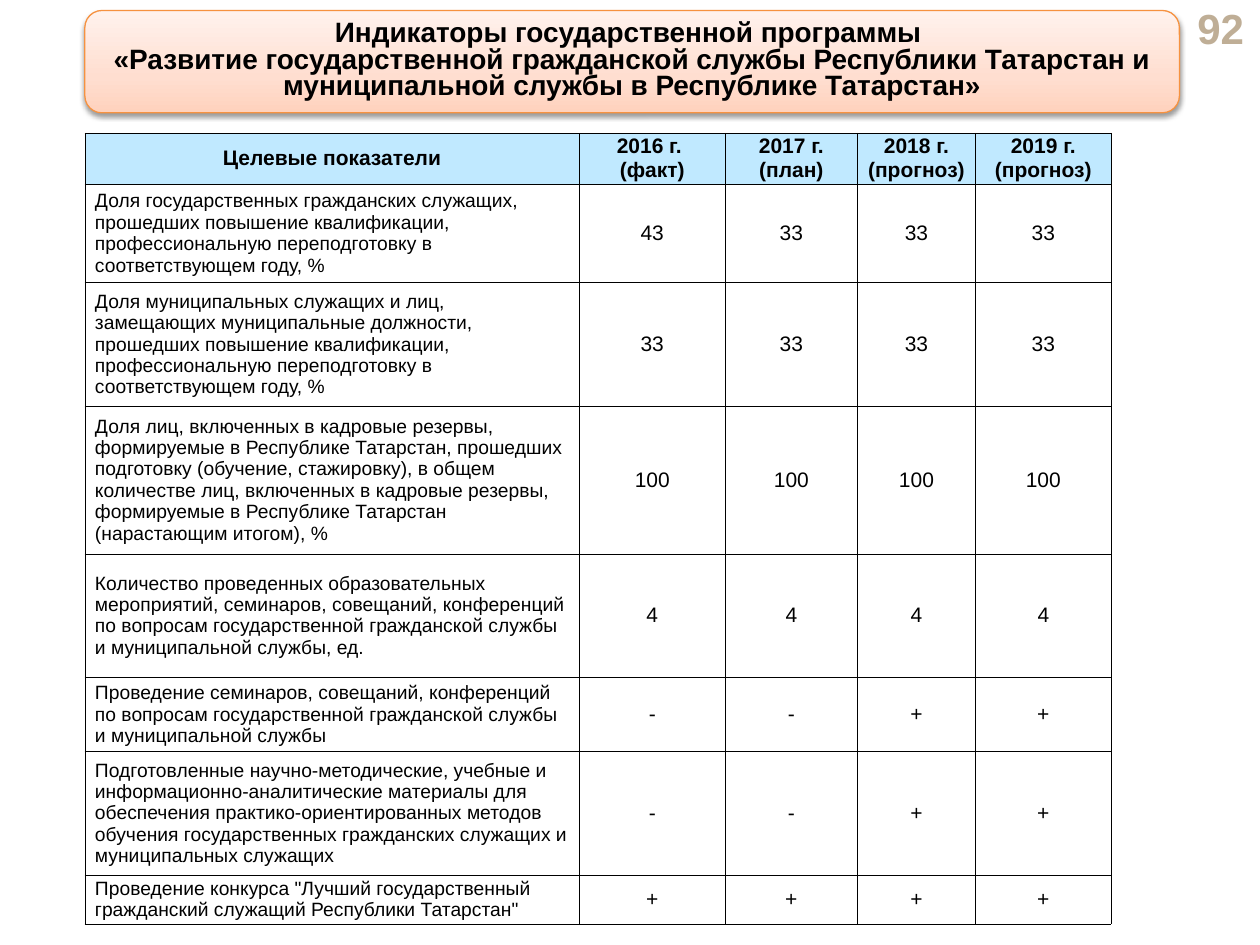
from copy import deepcopy

from lxml import etree
from pptx import Presentation
from pptx.dml.color import RGBColor
from pptx.enum.shapes import MSO_SHAPE
from pptx.enum.text import MSO_ANCHOR, PP_ALIGN
from pptx.oxml.ns import qn
from pptx.util import Pt

ROUNDED = MSO_SHAPE.ROUNDED_RECTANGLE
MIDDLE = MSO_ANCHOR.MIDDLE
LEFT, CENTER, RIGHT = PP_ALIGN.LEFT, PP_ALIGN.CENTER, PP_ALIGN.RIGHT

BLACK = RGBColor(0x00, 0x00, 0x00)
WHITE = RGBColor(0xFF, 0xFF, 0xFF)
SAND = RGBColor(0xBF, 0xAE, 0x96)
ORANGE = RGBColor(0xF6, 0x92, 0x40)
HEADER_BLUE = RGBColor(0xC0, 0xE9, 0xFF)
BANNER_STOPS = [
    (0, RGBColor(0xFF, 0xD2, 0xBD)),
    (0.35, RGBColor(0xFF, 0xDE, 0xD0)),
    (1, RGBColor(0xFF, 0xF2, 0xED)),
]

TITLE = (
    "Индикаторы государственной программы \n"
    "«Развитие государственной гражданской службы Республики Татарстан "
    "и муниципальной службы в Республике Татарстан»"
)
HEADERS = [
    "Целевые показатели",
    "2016 г. \n(факт)",
    "2017 г. (план)",
    "2018 г.\n(прогноз)",
    "2019 г.\n(прогноз)",
]
INDICATORS = [
    ("Доля государственных гражданских служащих, прошедших повышение "
     "квалификации, профессиональную переподготовку в соответствующем году, %",
     "43", "33", "33", "33"),
    ("Доля муниципальных служащих и лиц, замещающих муниципальные должности, "
     "прошедших повышение квалификации, профессиональную переподготовку "
     "в соответствующем году, %",
     "33", "33", "33", "33"),
    ("Доля лиц, включенных в кадровые резервы, формируемые в Республике "
     "Татарстан, прошедших подготовку (обучение, стажировку), в общем "
     "количестве лиц, включенных в кадровые резервы, формируемые в Республике "
     "Татарстан (нарастающим итогом), %",
     "100", "100", "100", "100"),
    ("Количество проведенных образовательных мероприятий, семинаров, "
     "совещаний, конференций по вопросам государственной гражданской службы "
     "и муниципальной службы, ед.",
     "4", "4", "4", "4"),
    ("Проведение семинаров, совещаний, конференций по вопросам "
     "государственной гражданской службы и муниципальной службы",
     "-", "-", "+", "+"),
    ("Подготовленные научно-методические, учебные и "
     "информационно-аналитические материалы для обеспечения "
     "практико-ориентированных методов обучения государственных гражданских "
     "служащих и муниципальных служащих",
     "-", "-", "+", "+"),
    ('Проведение конкурса "Лучший государственный гражданский служащий '
     'Республики Татарстан"',
     "+", "+", "+", "+"),
]
COLUMN_WIDTHS = [282.5, 83.5, 75.5, 67.5, 77.5]
ROW_HEIGHTS = [29, 56.5, 70.5, 84.5, 70.5, 42.5, 70.5, 28]


class SlideBuilder:
    """Holds the style and the current slide."""

    font_name = "Arial"
    border_width = 0.25
    label_inset = 5.8

    def __init__(self, slide):
        self.slide = slide

    def format_text(self, text_frame, size, bold, color=BLACK, align=CENTER):
        for paragraph in text_frame.paragraphs:
            paragraph.alignment = align
            for run in paragraph.runs:
                run.font.name = self.font_name
                run.font.size = Pt(size)
                run.font.bold = bold
                run.font.color.rgb = color

    def add_page_number(self, text, left, top, width, height):
        box = self.slide.shapes.add_textbox(Pt(left), Pt(top), Pt(width), Pt(height))
        text_frame = box.text_frame
        text_frame.word_wrap = True
        text_frame.vertical_anchor = MIDDLE
        text_frame.text = text
        self.format_text(text_frame, 24, True, SAND, RIGHT)

    def add_banner(self, text, left, top, width, height):
        shape = self.slide.shapes.add_shape(
            ROUNDED, Pt(left), Pt(top), Pt(width), Pt(height))
        shape.line.color.rgb = ORANGE
        shape.line.width = Pt(0.75)
        self.fill_gradient(shape)
        self.add_shadow(shape)
        text_frame = shape.text_frame
        text_frame.word_wrap = True
        text_frame.vertical_anchor = MIDDLE
        paragraph = text_frame.paragraphs[0]
        paragraph.text = text
        paragraph.line_spacing = Pt(15)
        self.format_text(text_frame, 16, True)

    def fill_gradient(self, shape):
        shape.fill.gradient()
        shape.fill.gradient_angle = 90
        stop_list = shape.element.spPr.find(".//" + qn("a:gsLst"))
        stop_list.append(deepcopy(stop_list[0]))
        for stop, (position, color) in zip(shape.fill.gradient_stops, BANNER_STOPS):
            stop.position = position
            stop.color.rgb = color

    def add_shadow(self, shape):
        shape.shadow.inherit = False
        effects = shape.element.spPr.find(qn("a:effectLst"))
        shadow = etree.SubElement(
            effects, qn("a:outerShdw"), blurRad=str(Pt(3.1)), dist=str(Pt(1.6)),
            dir="5400000", rotWithShape="0")
        color = etree.SubElement(shadow, qn("a:srgbClr"), val=str(BLACK))
        etree.SubElement(color, qn("a:alpha"), val="38000")

    def add_table(self, rows, left, top):
        table = self.slide.shapes.add_table(
            len(rows), len(COLUMN_WIDTHS), Pt(left), Pt(top),
            Pt(sum(COLUMN_WIDTHS)), Pt(sum(ROW_HEIGHTS))).table
        table.first_row = table.horz_banding = False
        for column, width in zip(table.columns, COLUMN_WIDTHS):
            column.width = Pt(width)
        for row, height in zip(table.rows, ROW_HEIGHTS):
            row.height = Pt(height)
        for row_index, row in enumerate(rows):
            for column_index, text in enumerate(row):
                self.fill_cell(table.cell(row_index, column_index), text,
                               row_index == 0, column_index == 0)

    def fill_cell(self, cell, text, is_header, is_first_column):
        is_label = is_first_column and not is_header
        cell.margin_left = cell.margin_right = Pt(self.label_inset if is_label else 0)
        cell.margin_top = cell.margin_bottom = 0
        cell.vertical_anchor = MIDDLE
        self.add_borders(cell)
        cell.fill.solid()
        cell.fill.fore_color.rgb = HEADER_BLUE if is_header else WHITE
        cell.text_frame.text = text
        self.format_text(cell.text_frame, 11 if is_label else 12, is_header,
                         align=LEFT if is_label else CENTER)

    def add_borders(self, cell):
        properties = cell._tc.get_or_add_tcPr()
        for side in ("a:lnL", "a:lnR", "a:lnT", "a:lnB"):
            line = etree.SubElement(properties, qn(side), w=str(Pt(self.border_width)))
            fill = etree.SubElement(line, qn("a:solidFill"))
            etree.SubElement(fill, qn("a:srgbClr"), val=str(BLACK))


def main():
    presentation = Presentation()
    presentation.slide_width, presentation.slide_height = Pt(720), Pt(540)
    slide = presentation.slides.add_slide(presentation.slide_layouts[6])
    builder = SlideBuilder(slide)

    # Page number and title banner
    builder.add_page_number("92", 656, 3.5, 62, 24.5)
    builder.add_banner(TITLE, 48.5, 6, 625.5, 58.5)

    # Indicator table
    builder.add_table([HEADERS, *INDICATORS], 48.5, 76)

    presentation.save("out.pptx")


if __name__ == "__main__":
    main()
